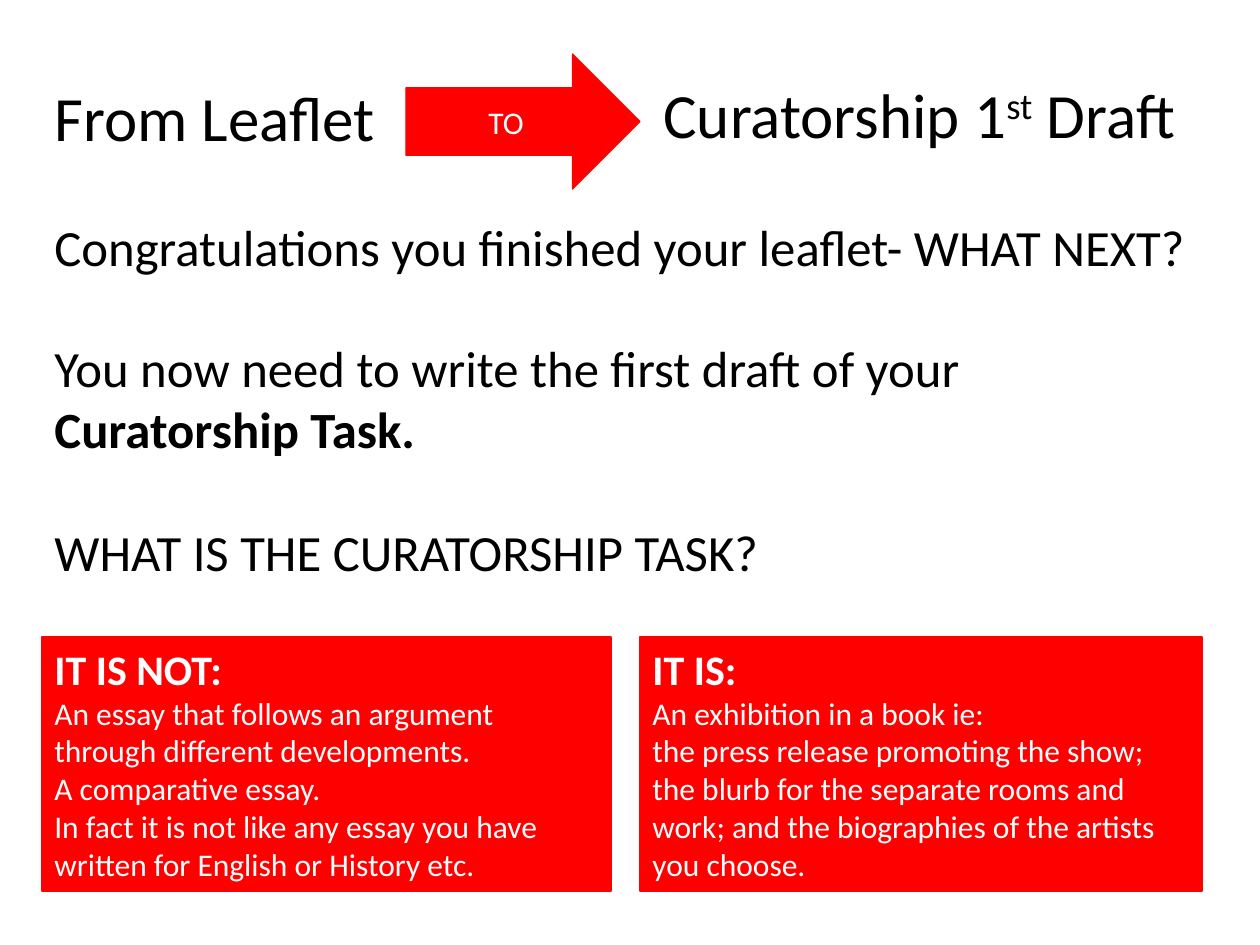
import dataclasses

import pptx
import pptx.dml.color
import pptx.enum.shapes
import pptx.enum.text
import pptx.util

PX = pptx.util.Inches(1) / 126
ALIGN = pptx.enum.text.PP_ALIGN
ANCHOR = pptx.enum.text.MSO_ANCHOR
SHAPES = pptx.enum.shapes.MSO_SHAPE


@dataclasses.dataclass(frozen=True)
class Theme:
    font: str = "Calibri"
    ink: str = "000000"
    accent: str = "FF0000"
    on_accent: str = "FFFFFF"
    title: int = 36
    body: int = 29
    heading: int = 24
    small: int = 18


THEME = Theme()


def rgb(value):
    return pptx.dml.color.RGBColor.from_string(value)


def px(*lengths):
    return [round(length * PX) for length in lengths]


def add_span(para, text, size, color, bold=False):
    span = para.add_run()
    span.text = text
    span.font.name = THEME.font
    span.font.size = pptx.util.Pt(size)
    span.font.bold = bold
    span.font.color.rgb = rgb(color)
    return span


def add_text(page, box, size, wrap=False):
    """Add a growing text box and return its first paragraph."""
    frame = page.shapes.add_textbox(*px(*box)).text_frame
    frame.word_wrap = wrap
    frame.auto_size = pptx.enum.text.MSO_AUTO_SIZE.SHAPE_TO_FIT_TEXT
    return frame.paragraphs[0]


def add_red_shape(page, kind, box, anchor):
    shape = page.shapes.add_shape(kind, *px(*box))
    shape.shadow.inherit = False
    shape.fill.solid()
    shape.fill.fore_color.rgb = rgb(THEME.accent)
    shape.line.color.rgb = rgb(THEME.accent)
    shape.line.width = pptx.util.Pt(0.75)
    shape.text_frame.word_wrap = True
    shape.text_frame.vertical_anchor = anchor
    return shape.text_frame


def add_header(page, box):
    left, top, width, height = box
    # Start and end of the step
    para = add_text(page, (left, top + 18, 349, 89), THEME.title)
    add_span(para, "From Leaflet", THEME.title, THEME.ink)
    para = add_text(page, (left + 609, top + 15, width - 609, 91), THEME.title)
    add_span(para, "Curatorship 1", THEME.title, THEME.ink)
    ordinal = add_span(para, "st", THEME.title, THEME.ink)
    ordinal.font._element.set("baseline", "30000")
    add_span(para, " Draft", THEME.title, THEME.ink)
    # Arrow between them
    frame = add_red_shape(page, SHAPES.RIGHT_ARROW,
                          (left + 364, top, 234, height), ANCHOR.MIDDLE)
    para = frame.paragraphs[0]
    para.alignment = ALIGN.CENTER
    add_span(para, "TO", THEME.small, THEME.on_accent)


def add_message(page, box):
    left, top, width, height = box
    para = add_text(page, (left, top, width, 74), THEME.body)
    add_span(para, "Congratulations you finished your leaflet- WHAT NEXT?",
             THEME.body, THEME.ink)
    para = add_text(page, (left, top + 121, width, 136), THEME.body, wrap=True)
    add_span(para, "You now need to write the first draft of your ",
             THEME.body, THEME.ink)
    add_span(para, "Curatorship Task.", THEME.body, THEME.ink, bold=True)
    para = add_text(page, (left, top + height - 74, 736, 74), THEME.body)
    add_span(para, "WHAT IS THE CURATORSHIP TASK?", THEME.body, THEME.ink)


def add_panel(page, box, heading, lines):
    frame = add_red_shape(page, SHAPES.RECTANGLE, box, ANCHOR.TOP)
    para = frame.paragraphs[0]
    para.alignment = ALIGN.LEFT
    add_span(para, heading, THEME.heading, THEME.on_accent, bold=True)
    for line in lines:
        para = frame.add_paragraph()
        para.alignment = ALIGN.LEFT
        add_span(para, line, THEME.small, THEME.on_accent)


def main():
    deck = pptx.Presentation()
    deck.slide_width, deck.slide_height = px(1260, 945)
    page = deck.slides.add_slide(deck.slide_layouts[6])

    add_header(page, (42, 54, 1170, 135))
    add_message(page, (42, 210, 1167, 379))
    add_panel(page, (42, 637, 569, 254), "IT IS NOT:", [
        "An essay that follows an argument through different developments.",
        "A comparative essay.",
        "In fact it is not like any essay you have written for English "
        "or History etc.",
    ])
    add_panel(page, (640, 637, 562, 254), "IT IS:", [
        "An exhibition in a book ie:",
        "the press release promoting the show;",
        "the blurb for the separate rooms and work; and the biographies "
        "of the artists you choose.",
    ])
    deck.save("out.pptx")


if __name__ == "__main__":
    main()
